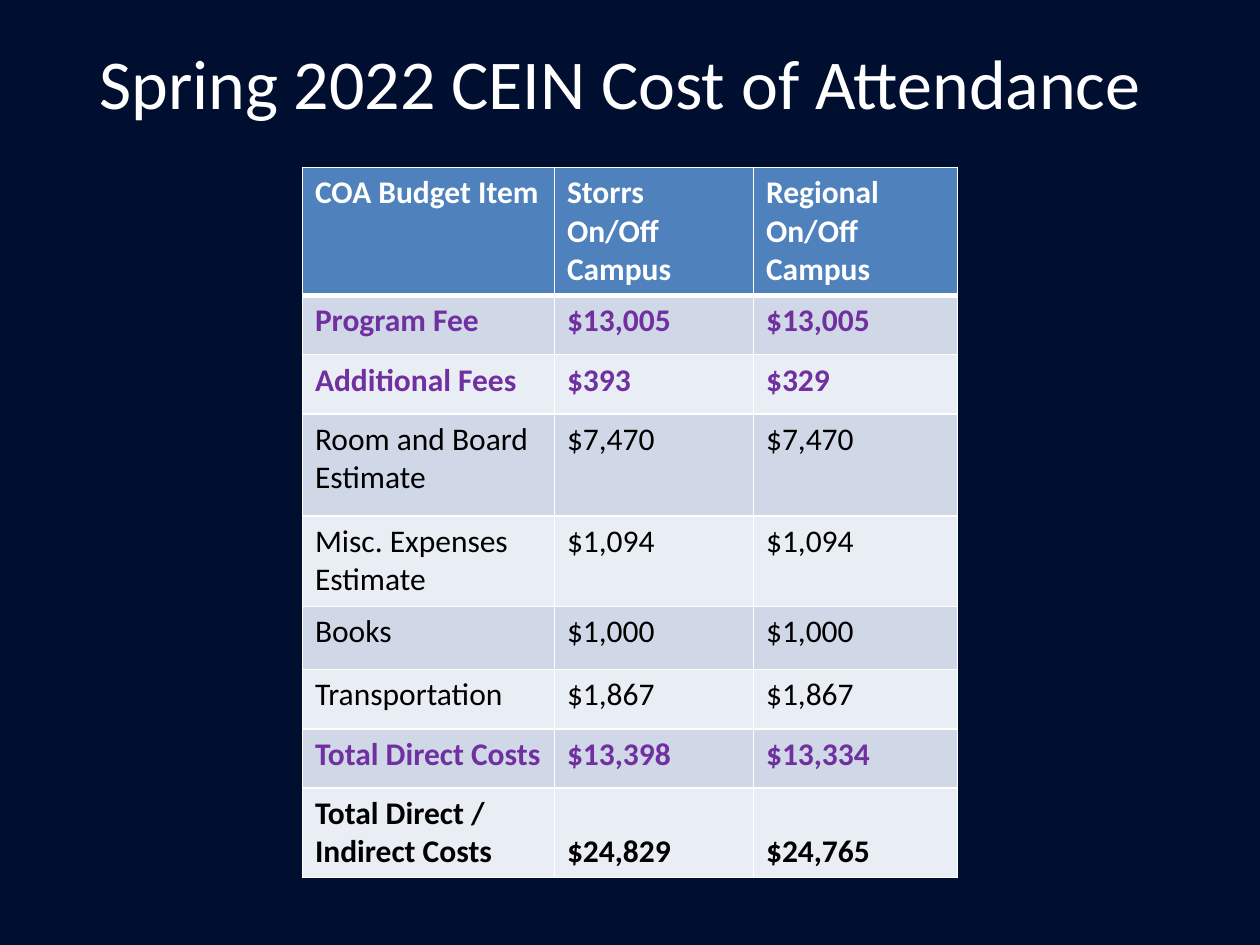
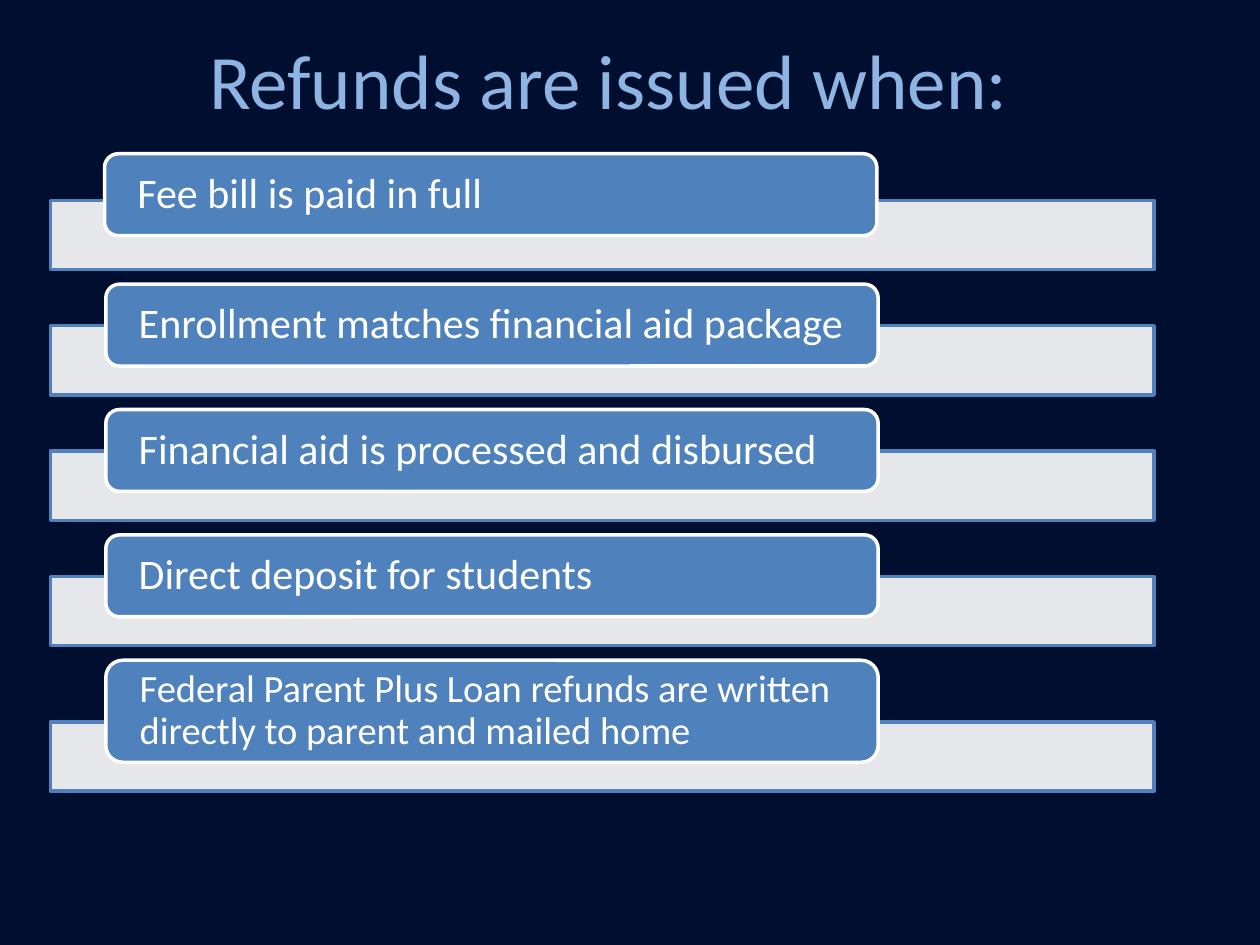
from pptx import Presentation
from pptx.dml.color import RGBColor
from pptx.enum.shapes import MSO_SHAPE
from pptx.enum.text import MSO_ANCHOR, PP_ALIGN
from pptx.oxml.ns import qn
from pptx.util import Inches, Pt
from lxml import etree

RECT = MSO_SHAPE.RECTANGLE
ROUNDED = MSO_SHAPE.ROUNDED_RECTANGLE
MIDDLE, BOTTOM = MSO_ANCHOR.MIDDLE, MSO_ANCHOR.BOTTOM
LEFT, CENTER = PP_ALIGN.LEFT, PP_ALIGN.CENTER

NAVY = RGBColor(0x00, 0x0E, 0x2F)
WHITE = RGBColor(0xFF, 0xFF, 0xFF)
BLACK = RGBColor(0x00, 0x00, 0x00)
BLUE = RGBColor(0x4F, 0x81, 0xBD)
LIGHT_BLUE = RGBColor(0x8E, 0xB4, 0xE3)
PURPLE = RGBColor(0x70, 0x30, 0xA0)
BANDS = (RGBColor(0xD0, 0xD8, 0xE8), RGBColor(0xE9, 0xED, 0xF4))
FONT = "Calibri"

COLUMN_WIDTHS = (2, 1.58, 1.62)
HEADINGS = ("COA Budget Item", "Storrs\nOn/Off\nCampus", "Regional On/Off\nCampus")
COSTS = [
    ("Program Fee", "$13,005", "$13,005", 0.47, PURPLE, True),
    ("Additional Fees", "$393", "$329", 0.47, PURPLE, True),
    ("Room and Board Estimate", "$7,470", "$7,470", 0.81, BLACK, False),
    ("Misc. Expenses Estimate", "$1,094", "$1,094", 0.72, BLACK, False),
    ("Books", "$1,000", "$1,000", 0.5, BLACK, False),
    ("Transportation", "$1,867", "$1,867", 0.47, BLACK, False),
    ("Total Direct Costs", "$13,398", "$13,334", 0.47, PURPLE, True),
    ("Total Direct / Indirect Costs", "$24,829", "$24,765", 0.71, BLACK, True),
]

FIRST_TOP, LAST_TOP = 1.26, 5.24
CONDITIONS = [
    ("Fee bill is paid in full", 24, 0.65, 0.83, -0.04),
    ("Enrollment matches financial aid package", 24, 0.65, 0.84, 0),
    ("Financial aid is processed and disbursed", 24, 0.65, 0.84, 0),
    ("Direct deposit for students", 24, 0.65, 0.84, 0),
    ("Federal Parent Plus Loan refunds are written directly to parent and mailed home",
     22, 0.81, 0.84, 0),
]


def style_text(frame, size, color, align, bold=False):
    for paragraph in frame.paragraphs:
        paragraph.alignment = align
        paragraph.font.name = FONT
        paragraph.font.size = Pt(size)
        paragraph.font.bold = bold
        paragraph.font.color.rgb = color


def add_titled_slide(prs, text, box, size, color):
    slide = prs.slides.add_slide(prs.slide_layouts[5])
    title = slide.shapes.title
    title.left, title.top, title.width, title.height = map(Inches, box)
    title.text_frame.text = text
    title.text_frame.vertical_anchor = MIDDLE
    style_text(title.text_frame, size, color, CENTER)
    return slide


def set_borders(cell, top=1, bottom=1):
    properties = cell._tc.get_or_add_tcPr()
    for side, points in (("L", 1), ("R", 1), ("T", top), ("B", bottom)):
        line = etree.SubElement(properties, qn(f"a:ln{side}"), w=str(Pt(points)))
        fill = etree.SubElement(line, qn("a:solidFill"))
        etree.SubElement(fill, qn("a:srgbClr"), val=str(WHITE))


def fill_cell(cell, text, fill, color, bold, top=1, bottom=1):
    cell.text = text
    style_text(cell.text_frame, 18, color, LEFT, bold)
    set_borders(cell, top, bottom)
    cell.fill.solid()
    cell.fill.fore_color.rgb = fill


def add_cost_table(slide):
    costs = slide.shapes.add_table(
        len(COSTS) + 1, len(HEADINGS),
        Inches(2.4), Inches(1.33), Inches(5.2), Inches(5.6)).table
    for column, width in zip(costs.columns, COLUMN_WIDTHS):
        column.width = Inches(width)
    costs.rows[0].height = Inches(1.01)
    for col, heading in enumerate(HEADINGS):
        fill_cell(costs.cell(0, col), heading, BLUE, WHITE, True, bottom=3)
    for row, (*texts, height, color, bold) in enumerate(COSTS, start=1):
        costs.rows[row].height = Inches(height)
        for col, text in enumerate(texts):
            fill_cell(costs.cell(row, col), text, BANDS[(row - 1) % 2], color, bold,
                      top=3 if row == 1 else 1)
    for col in (1, 2):
        costs.cell(len(COSTS), col).vertical_anchor = BOTTOM


def add_box(slide, kind, box, fill, line):
    shape = slide.shapes.add_shape(kind, *map(Inches, box))
    shape.shadow.inherit = False
    shape.fill.solid()
    shape.fill.fore_color.rgb = fill
    shape.line.color.rgb = line
    shape.line.width = Pt(2)
    return shape


def add_condition(slide, top, text, size, height, left, nudge):
    bar = add_box(slide, RECT, (0.4, top + height - 0.32, 8.76, 0.55), WHITE, BLUE)
    bar_color = bar._element.spPr.find(qn("a:solidFill")).find(qn("a:srgbClr"))
    etree.SubElement(bar_color, qn("a:alpha"), val="90000")

    label = add_box(slide, ROUNDED, (left, top + nudge, 6.13, height), BLUE, WHITE)
    frame = label.text_frame
    frame.word_wrap = True
    frame.vertical_anchor = MIDDLE
    frame.margin_left = frame.margin_right = Inches(0.23)
    frame.margin_top = frame.margin_bottom = 0
    frame.text = text
    frame.paragraphs[0].line_spacing = 0.9
    style_text(frame, size, WHITE, LEFT)


def main():
    prs = Presentation()
    prs.slide_width, prs.slide_height = Inches(10), Inches(7.5)
    background = prs.slide_master.background.fill
    background.solid()
    background.fore_color.rgb = NAVY

    cost_slide = add_titled_slide(prs, "Spring 2022 CEIN Cost of Attendance",
                                  (0.42, 0.11, 9, 1.08), 40, WHITE)
    add_cost_table(cost_slide)

    refund_slide = add_titled_slide(prs, "Refunds are issued when: ",
                                    (0.4, 0, 9, 1.25), 44, LIGHT_BLUE)
    pitch = (LAST_TOP - FIRST_TOP) / (len(CONDITIONS) - 1)
    for index, condition in enumerate(CONDITIONS):
        add_condition(refund_slide, FIRST_TOP + index * pitch, *condition)

    prs.save("out.pptx")


if __name__ == "__main__":
    main()
